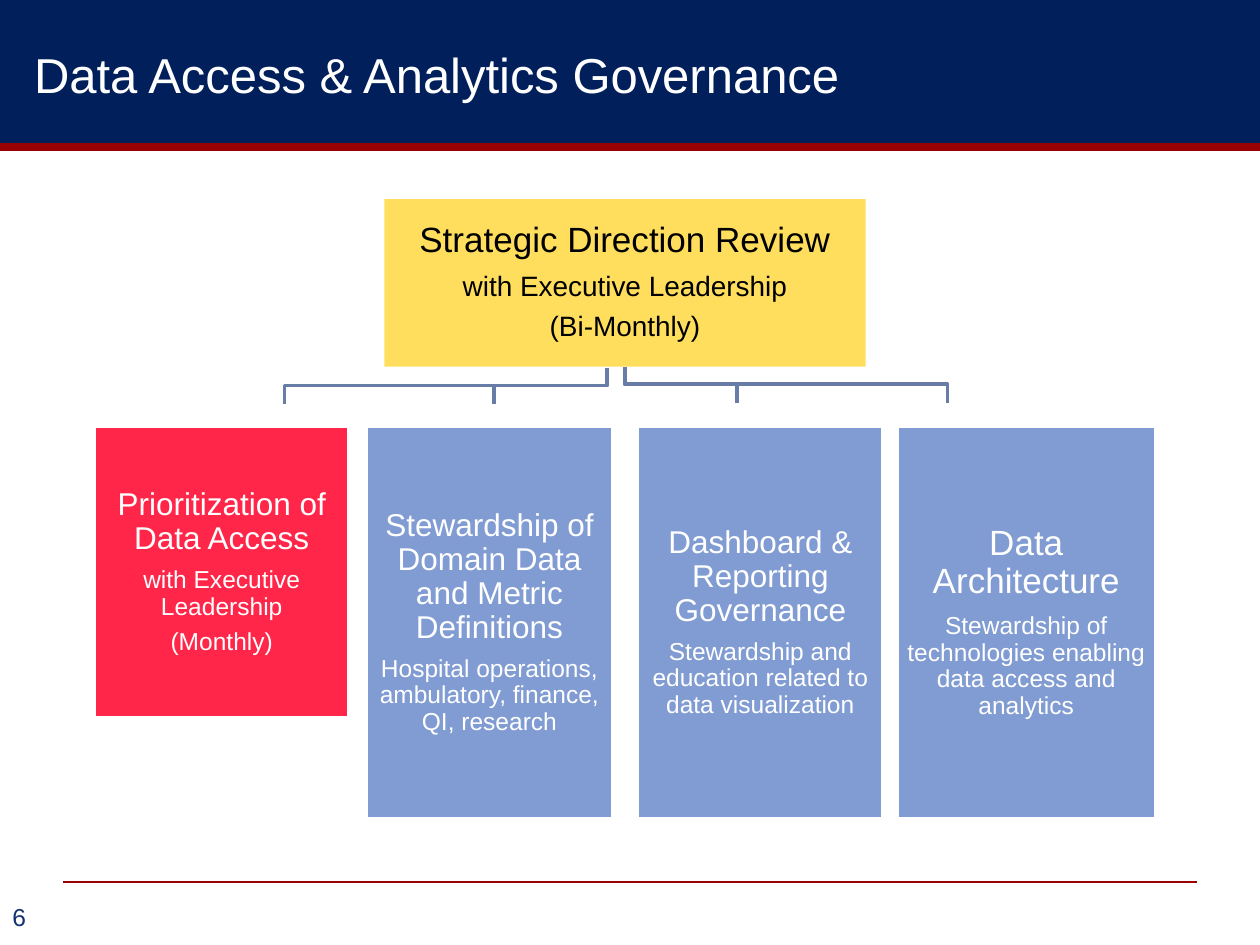
from dataclasses import dataclass

from lxml import etree
from pptx import Presentation
from pptx import util as u
from pptx.dml.color import RGBColor
from pptx.enum import shapes, text
from pptx.oxml.ns import qn

NAVY, RED, BLUE, STEEL, WHITE = "011F5B", "990000", "819CD2", "677DA8", "FFFFFF"
FONT = "Arial"


@dataclass
class Card:
    left: float
    top: float
    width: float
    height: float
    fill: str
    ink: str
    edge: str | None
    lines: list[tuple[str, int]]


@dataclass
class Branch:
    start: float
    top: float
    ends: tuple[float, float]


CARDS = [
    Card(3.05, 1.58, 3.82, 1.33, "FFDE5E", "000000", None, [
        ("Strategic Direction Review", 20),
        ("with Executive Leadership", 16),
        ("(Bi-Monthly)", 16)]),
    Card(0.75, 3.38, 2.02, 2.32, "FF2649", WHITE, WHITE, [
        ("Prioritization of Data Access", 18),
        ("with Executive Leadership", 14),
        ("(Monthly)", 14)]),
    Card(2.91, 3.38, 1.95, 3.12, BLUE, WHITE, WHITE, [
        ("Stewardship of Domain Data and Metric Definitions", 18),
        ("Hospital operations, ambulatory, finance, QI, research", 14)]),
    Card(5.06, 3.38, 1.95, 3.12, BLUE, WHITE, WHITE, [
        ("Dashboard & Reporting Governance", 18),
        ("Stewardship and education related to data visualization", 14)]),
    Card(7.12, 3.38, 2.05, 3.12, BLUE, WHITE, WHITE, [
        ("Data Architecture", 20),
        ("Stewardship of technologies enabling data access and analytics", 14)]),
]
BRANCHES = [Branch(4.96, 2.91, (7.52, 5.85)), Branch(4.82, 2.92, (2.26, 3.92))]


def color(code: str) -> RGBColor:
    return RGBColor.from_string(code)


def apply(item, values: dict) -> None:
    for name, value in values.items():
        setattr(item, name, value)


def ink(para, size: int, code: str) -> None:
    apply(para.font, {"name": FONT, "size": u.Pt(size)})
    para.font.color.rgb = color(code)


def paint(shape, fill: str | None, edge: str | None, width: float = 2) -> None:
    shape.shadow.inherit = False
    if fill:
        shape.fill.solid()
        shape.fill.fore_color.rgb = color(fill)
    else:
        shape.fill.background()
    if edge:
        shape.line.color.rgb = color(edge)
        shape.line.width = u.Pt(width)
    else:
        shape.line.fill.background()


def box(slide, left: float, top: float, width: float, height: float):
    return slide.shapes.add_shape(
        shapes.MSO_SHAPE.RECTANGLE, *map(u.Inches, (left, top, width, height)))


def rule(slide, left: float, right: float, top: float, width: float) -> None:
    line = slide.shapes.add_connector(
        shapes.MSO_CONNECTOR.STRAIGHT, *map(u.Inches, (left, top, right, top)))
    line.line.color.rgb = color(RED)
    line.line.width = u.Pt(width)
    etree.SubElement(line._element.spPr, qn("a:effectLst"))


def head(slide, words: str) -> None:
    title = slide.shapes.title
    apply(title, {"left": u.Inches(0.17), "top": 0,
                  "width": u.Inches(9.83), "height": u.Inches(1.17)})
    frame = title.text_frame
    frame.text = words
    apply(frame, {"vertical_anchor": text.MSO_ANCHOR.MIDDLE,
                  "auto_size": text.MSO_AUTO_SIZE.NONE})
    para = frame.paragraphs[0]
    para.alignment = text.PP_ALIGN.LEFT
    ink(para, 28, WHITE)
    slide.shapes._spTree.append(title._element)


def number(slide, words: str) -> None:
    note = slide.shapes.add_textbox(
        *map(u.Inches, (0, 7.11, 0.44, 0.34)))
    note.text_frame.text = words
    note.text_frame.word_wrap = False
    ink(note.text_frame.paragraphs[0], 14, "143171")


def fork(slide, branch: Branch) -> None:
    mid, low = branch.top + 0.14, branch.top + 0.29
    for end in branch.ends:
        form = slide.shapes.build_freeform(
            u.Inches(branch.start), u.Inches(branch.top))
        form.add_line_segments(
            [(u.Inches(x), u.Inches(y)) for x, y in
             ((branch.start, mid), (end, mid), (end, low))], close=False)
        paint(form.convert_to_shape(), None, STEEL)


def draw(slide, card: Card) -> None:
    shape = box(slide, card.left, card.top, card.width, card.height)
    paint(shape, card.fill, card.edge)
    frame = shape.text_frame
    inset = u.Inches(0.01)
    apply(frame, {"word_wrap": True, "vertical_anchor": text.MSO_ANCHOR.MIDDLE,
                  "margin_left": inset, "margin_right": inset,
                  "margin_top": inset, "margin_bottom": inset})
    for i, (words, size) in enumerate(card.lines):
        para = frame.add_paragraph() if i else frame.paragraphs[0]
        para.text = words
        apply(para, {"alignment": text.PP_ALIGN.CENTER, "line_spacing": 0.9,
                     "space_after": u.Pt(round(size * 0.35, 1))})
        ink(para, size, card.ink)


def main() -> None:
    deck = Presentation()
    apply(deck, {"slide_width": u.Inches(10), "slide_height": u.Inches(7.5)})
    slide = deck.slides.add_slide(deck.slide_layouts[5])
    paint(box(slide, 0, 0, 10, 1.17), NAVY, None)
    rule(slide, 0, 10, 1.17, 4.5)
    rule(slide, 0.5, 9.5, 7, 1.5)
    number(slide, "6")
    head(slide, "Data Access & Analytics Governance")
    for branch in BRANCHES:
        fork(slide, branch)
    for card in CARDS:
        draw(slide, card)
    deck.save("out.pptx")


if __name__ == "__main__":
    main()
